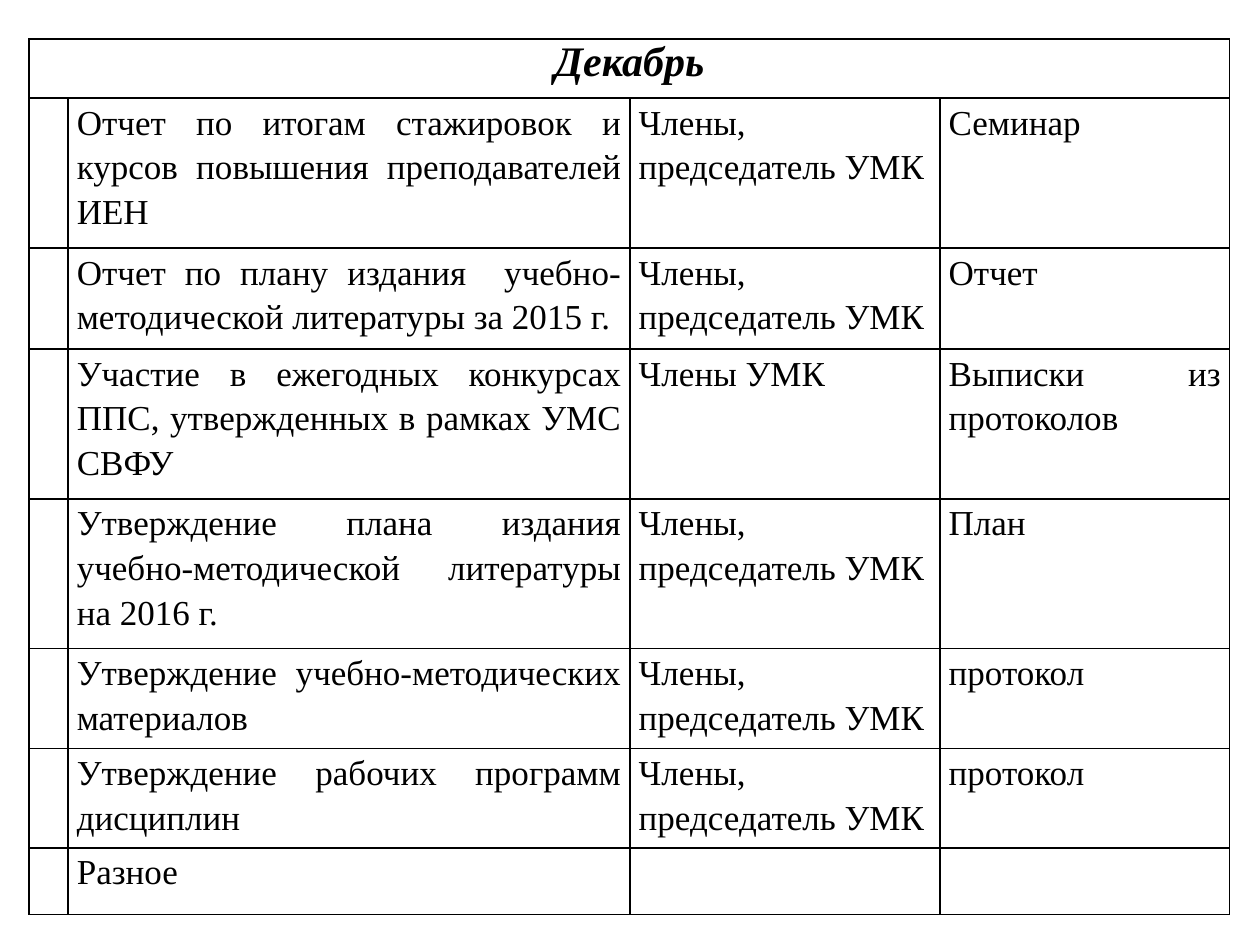
from lxml import etree
from pptx import Presentation
from pptx import util as u
from pptx.dml.color import RGBColor
from pptx.enum import text
from pptx.oxml import ns

COLORS = {"ink": "000000", "paper": "FFFFFF"}
FONT = "Times New Roman"
COLUMNS = [0.31, 4.46, 2.46, 2.3]
ROWS = [0.47, 1.19, 0.8, 1.19, 1.19, 0.79, 0.79, 0.53]
ALIGN = text.PP_ALIGN
HEADER = {"size": u.Pt(24), "bold": True, "italic": True, "name": FONT}
BODY = {"size": u.Pt(20), "bold": False, "italic": False, "name": FONT}

MEMBERS = "Члены, председатель УМК"
PLAN = [
    ("Отчет по итогам стажировок и курсов повышения преподавателей ИЕН", MEMBERS, "Семинар"),
    ("Отчет по плану издания  учебно-методической литературы за 2015 г.", MEMBERS, "Отчет"),
    ("Участие в ежегодных конкурсах ППС, утвержденных в рамках УМС СВФУ",
     "Члены УМК", "Выписки из протоколов"),
    ("Утверждение плана издания учебно-методической литературы на 2016 г.", MEMBERS, "План"),
    ("Утверждение учебно-методических материалов", MEMBERS, "протокол"),
    ("Утверждение рабочих программ дисциплин", MEMBERS, "протокол"),
    ("Разное", "", ""),
]


def write_cell(cell, words, font_format, alignment, spacing, inset):
    margins = {"margin_left": inset, "margin_right": inset, "margin_top": 0, "margin_bottom": 0}
    for name, value in margins.items():
        setattr(cell, name, u.Inches(value))
    paragraph = cell.text_frame.paragraphs[0]
    paragraph.alignment = alignment
    paragraph.line_spacing = spacing
    run = paragraph.add_run()
    run.text = words
    for name, value in font_format.items():
        setattr(run.font, name, value)
    run.font.color.rgb = RGBColor.from_string(COLORS["ink"])


def add_borders(cell):
    properties = cell._tc.get_or_add_tcPr()
    for position, side in enumerate(("lnL", "lnR", "lnT", "lnB")):
        line = etree.Element(ns.qn(f"a:{side}"), w=str(u.Pt(1)))
        fill = etree.SubElement(line, ns.qn("a:solidFill"))
        etree.SubElement(fill, ns.qn("a:srgbClr"), val=COLORS["ink"])
        properties.insert(position, line)


# Slide
presentation = Presentation()
presentation.slide_width, presentation.slide_height = u.Inches(10), u.Inches(7.5)
slide = presentation.slides.add_slide(presentation.slide_layouts[6])

# Table grid
table = slide.shapes.add_table(
    len(ROWS), len(COLUMNS), u.Inches(0.23), u.Inches(0.31),
    u.Inches(sum(COLUMNS)), u.Inches(sum(ROWS))).table
for column, width in zip(table.columns, COLUMNS):
    column.width = u.Inches(width)
for row, height in zip(table.rows, ROWS):
    row.height = u.Inches(height)
for cell in table.iter_cells():
    cell.fill.solid()
    cell.fill.fore_color.rgb = RGBColor.from_string(COLORS["paper"])
    add_borders(cell)

# Month heading across all columns
month = table.cell(0, 0)
month.merge(table.cell(0, len(COLUMNS) - 1))
write_cell(month, "Декабрь", HEADER, ALIGN.CENTER, 1.0, 0.05)

# Tasks, people in charge and resulting documents
for row_number, entries in enumerate(PLAN, start=1):
    for column_number, words in enumerate(entries, start=1):
        if words:
            alignment = ALIGN.LEFT if column_number == 2 else ALIGN.JUSTIFY
            write_cell(table.cell(row_number, column_number), words, BODY, alignment, 1.15, 0.07)

presentation.save("out.pptx")
